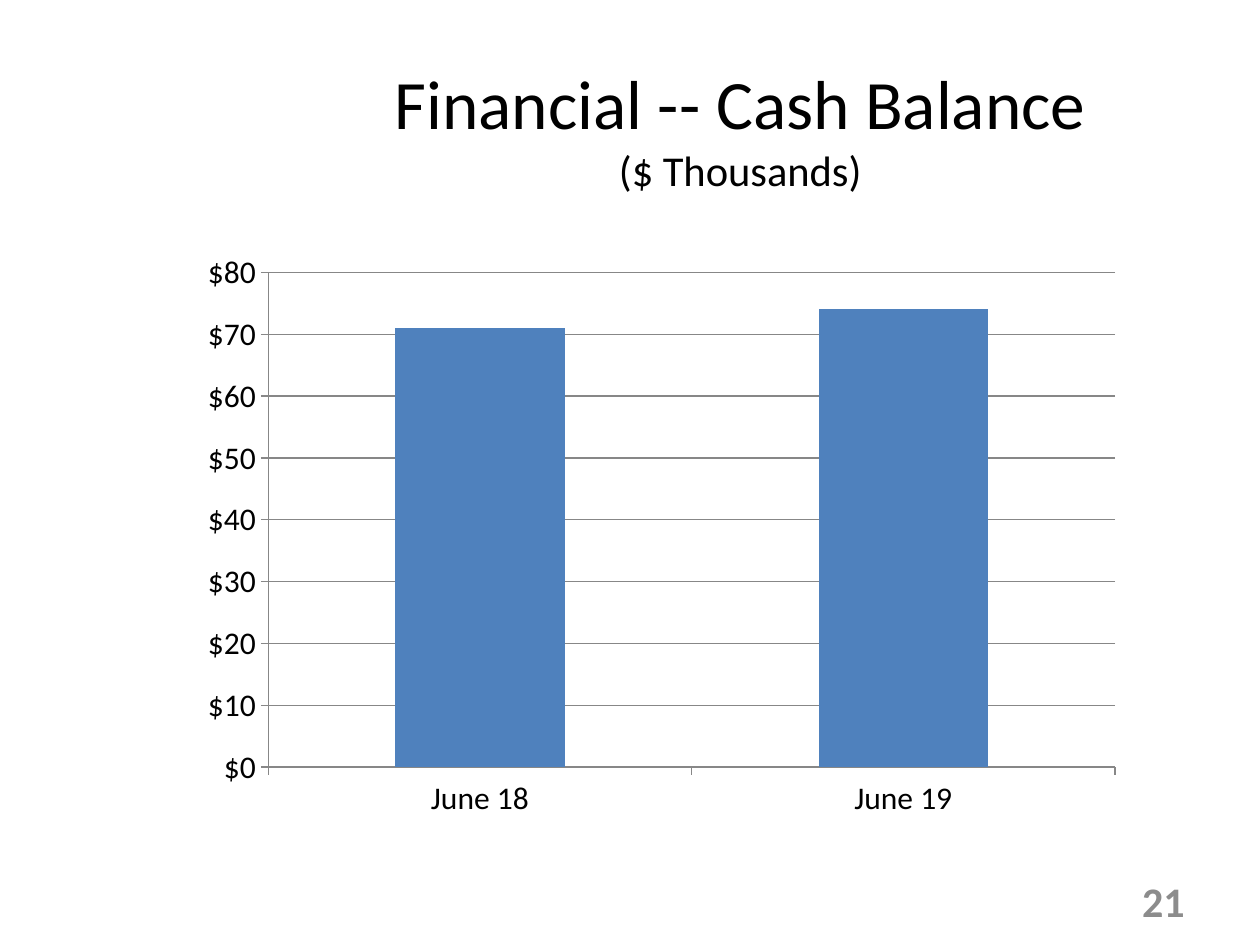
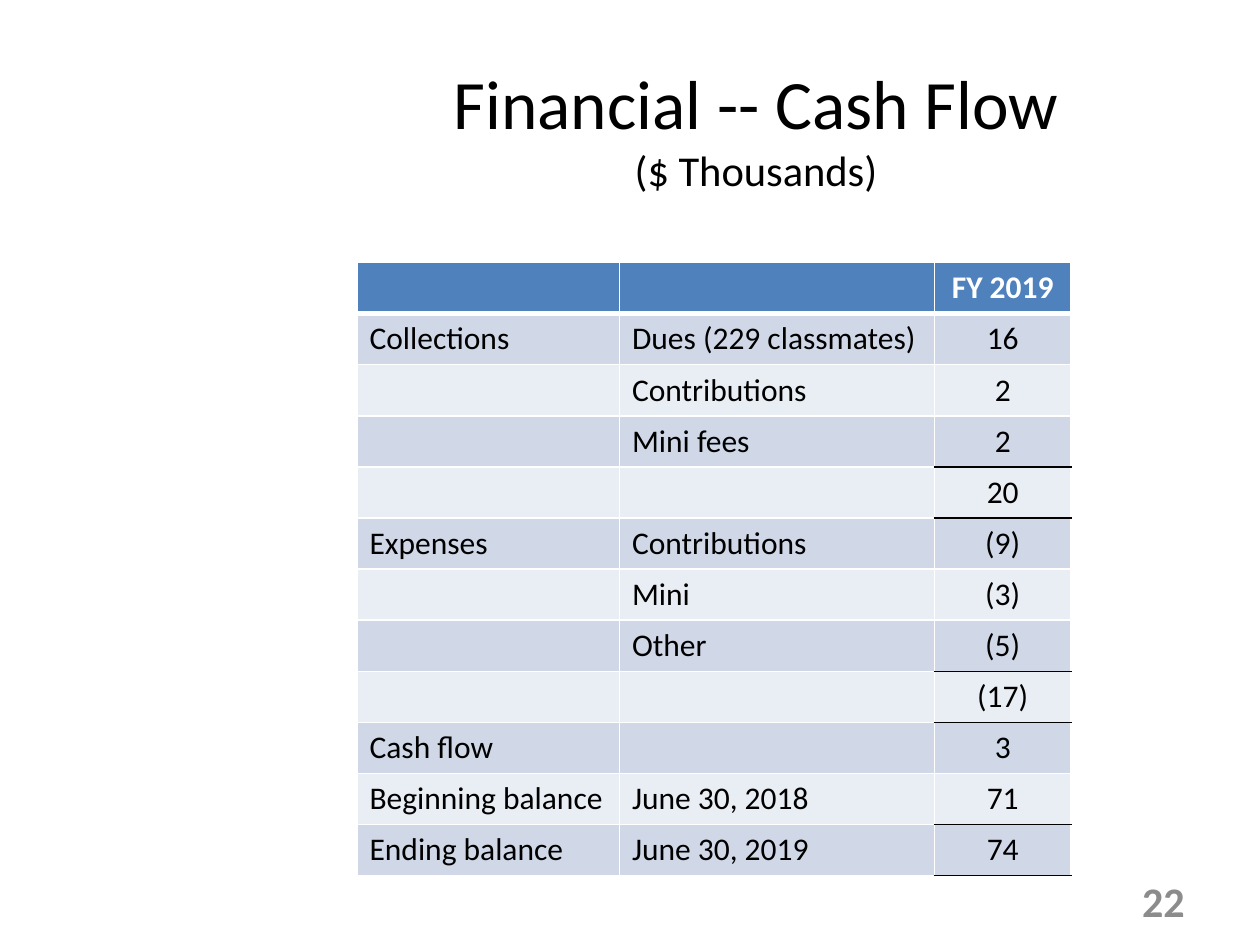
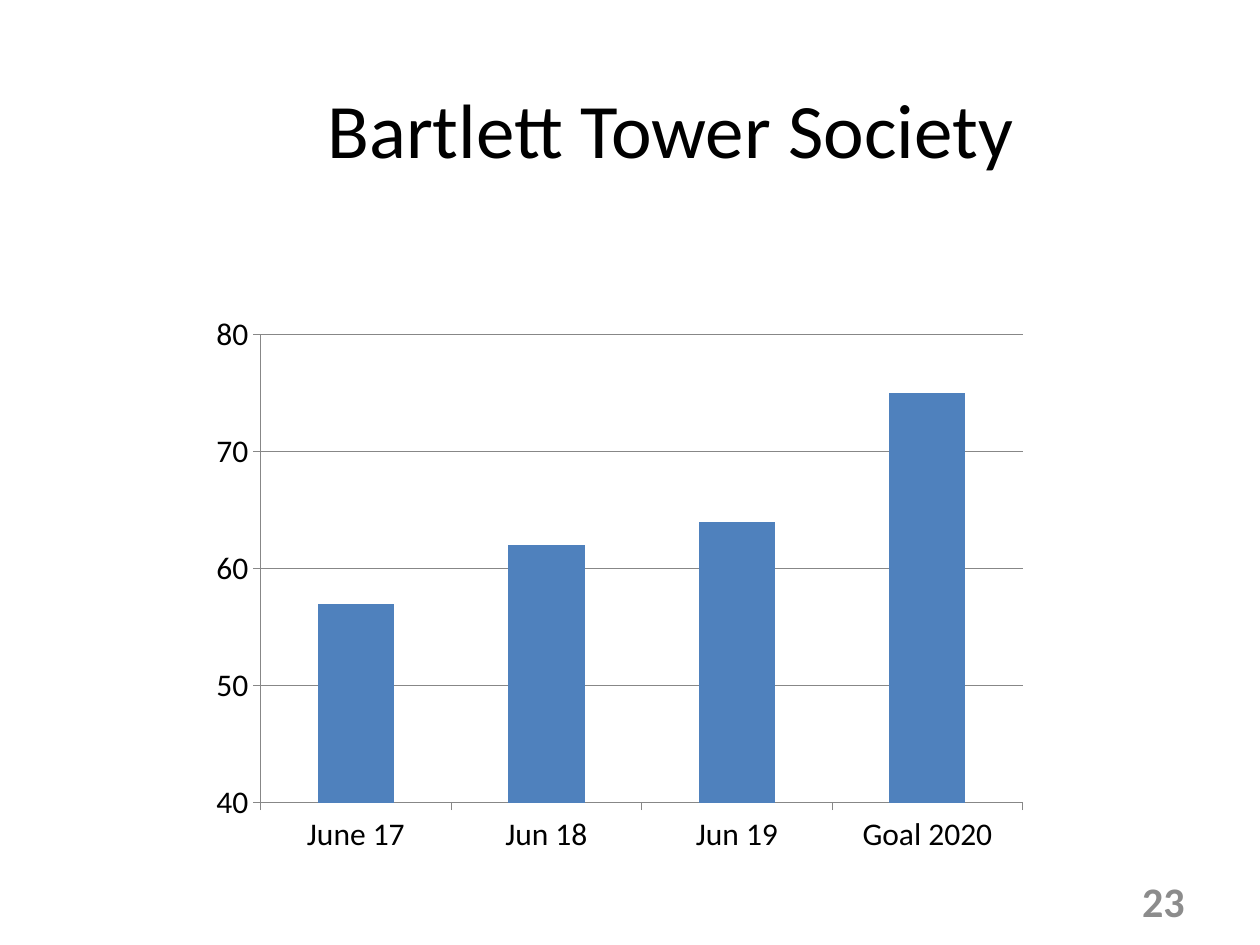
"""Builds three class finance slides: cash balance, cash flow and society growth."""
from lxml import etree
from pptx import Presentation
from pptx import util as u
from pptx.chart import data as cd
from pptx.dml.color import RGBColor
from pptx.enum import chart as ec, text as et
from pptx.oxml import ns

FONT = "Calibri"
HUES = {"ink": "000000", "white": "FFFFFF", "blue": "4F81BD", "dark": "D0D8E8",
        "pale": "E9EDF4", "gray": "8C8C8C", "line": "878787"}
UNIT = "($ Thousands)"
KIND = ec.XL_CHART_TYPE
ALIGN = et.PP_ALIGN

TITLES = [
    ((174, 27, 498, 92), [("Financial -- Cash Balance", 39.6), (UNIT, 24.3)], ALIGN.CENTER),
    ((192, 27, 480, 92), [("Financial -- Cash Flow", 39.6), (UNIT, 24.3)], ALIGN.CENTER),
    ((180, 27, 492, 92), [("Bartlett Tower Society", 44)], ALIGN.LEFT),
]
FIRST = 21

CASH = {"box": (108, 138, 540, 336), "kind": KIND.COLUMN_STACKED, "lap": 100,
        "fmt": '"$"#,##0', "low": 0,
        "bars": [("June 18", 71), ("June 19", 74)]}
TOWER = {"box": (114, 174, 480, 320), "kind": KIND.COLUMN_CLUSTERED, "lap": 0,
         "fmt": "General", "low": 40,
         "bars": [("June 17", 57), ("Jun 18", 62), ("Jun 19", 64), ("Goal 2020", 75)]}

FLOW = [
    ("", "", "FY 2019"),
    ("Collections", "Dues (229 classmates)", "16"),
    ("", "Contributions", "2"),
    ("", "Mini fees", "2"),
    ("", "", "20"),
    ("Expenses", "Contributions", "(9)"),
    ("", "Mini", "(3)"),
    ("", "Other", "(5)"),
    ("", "", "(17)"),
    ("Cash flow", "", "3"),
    ("Beginning balance", "June 30, 2018", "71"),
    ("Ending balance", "June 30, 2019", "74"),
]
WIDTHS = (150, 180, 78)
ROW = 29.2
RULED = {3, 4, 7, 8, 10, 11}


def rgb(hue):
    return RGBColor.from_string(HUES[hue])


def place(box):
    return [u.Pt(n) for n in box]


def style(font, size, hue="ink", bold=False):
    font.name, font.size, font.bold = FONT, u.Pt(size), bold
    font.color.rgb = rgb(hue)


def write(slide, box, lines, align, hue="ink", bold=False):
    frame = slide.shapes.add_textbox(*place(box)).text_frame
    frame.word_wrap = True
    frame.vertical_anchor = et.MSO_ANCHOR.MIDDLE
    para = frame.paragraphs[0]
    para.alignment = align
    for i, (words, size) in enumerate(lines):
        if i:
            para.add_line_break()
        run = para.add_run()
        run.text = words
        style(run.font, size, hue, bold)


def add_bars(slide, item):
    data = cd.CategoryChartData()
    data.categories = [name for name, _ in item["bars"]]
    data.add_series("Series 1", [val for _, val in item["bars"]])
    chart = slide.shapes.add_chart(item["kind"], *place(item["box"]), data).chart
    chart.has_legend = chart.has_title = False
    style(chart.font, 18)
    plot = chart.plots[0]
    plot.gap_width, plot.overlap, plot.vary_by_categories = 150, item["lap"], False
    fill = plot.series[0].format.fill
    fill.solid()
    fill.fore_color.rgb = rgb("blue")
    cats, vals = chart.category_axis, chart.value_axis
    vals.minimum_scale, vals.maximum_scale, vals.major_unit = item["low"], 80, 10
    vals.has_major_gridlines = True
    vals.tick_labels.number_format = item["fmt"]
    vals.tick_labels.number_format_is_linked = False
    for axis in (cats, vals):
        axis.major_tick_mark = ec.XL_TICK_MARK.OUTSIDE
    for part in (cats, vals, vals.major_gridlines):
        part.format.line.color.rgb = rgb("line")
        part.format.line.width = u.Pt(0.75)


def edge(cell, side, hue, width):
    props = cell._tc.get_or_add_tcPr()
    line = etree.SubElement(props, ns.qn("a:ln" + side), w=str(u.Pt(width)))
    solid = etree.SubElement(line, ns.qn("a:solidFill"))
    etree.SubElement(solid, ns.qn("a:srgbClr"), val=HUES[hue])


def rule(row, col):
    if row == 0:
        return "white", 3
    return ("ink" if col == 2 and row in RULED else "white"), 1


def add_flow(slide):
    box = (204, 150, sum(WIDTHS), ROW * len(FLOW))
    table = slide.shapes.add_table(len(FLOW), len(WIDTHS), *place(box)).table
    for col, width in zip(table.columns, WIDTHS):
        col.width = u.Pt(width)
    for r, cells in enumerate(FLOW):
        table.rows[r].height = u.Pt(ROW)
        for c, words in enumerate(cells):
            cell = table.cell(r, c)
            para = cell.text_frame.paragraphs[0]
            para.alignment = ALIGN.CENTER if c == 2 else ALIGN.LEFT
            if words:
                run = para.add_run()
                run.text = words
                style(run.font, 18, "ink" if r else "white", r == 0)
            edge(cell, "L", "white", 1)
            edge(cell, "R", "white", 1)
            edge(cell, "T", *(rule(r - 1, c) if r else ("white", 1)))
            edge(cell, "B", *rule(r, c))
            cell.fill.solid()
            cell.fill.fore_color.rgb = rgb(("pale", "dark")[r % 2] if r else "blue")


def main():
    deck = Presentation()
    deck.slide_width, deck.slide_height = u.Pt(720), u.Pt(540)
    slides = []
    for page, (box, lines, align) in enumerate(TITLES, FIRST):
        slide = deck.slides.add_slide(deck.slide_layouts[6])
        write(slide, box, lines, align)
        write(slide, (516, 500.4, 168, 28.8), [(str(page), 24)], ALIGN.RIGHT, "gray", True)
        slides.append(slide)
    add_bars(slides[0], CASH)
    add_flow(slides[1])
    add_bars(slides[2], TOWER)
    deck.save("out.pptx")


if __name__ == "__main__":
    main()
